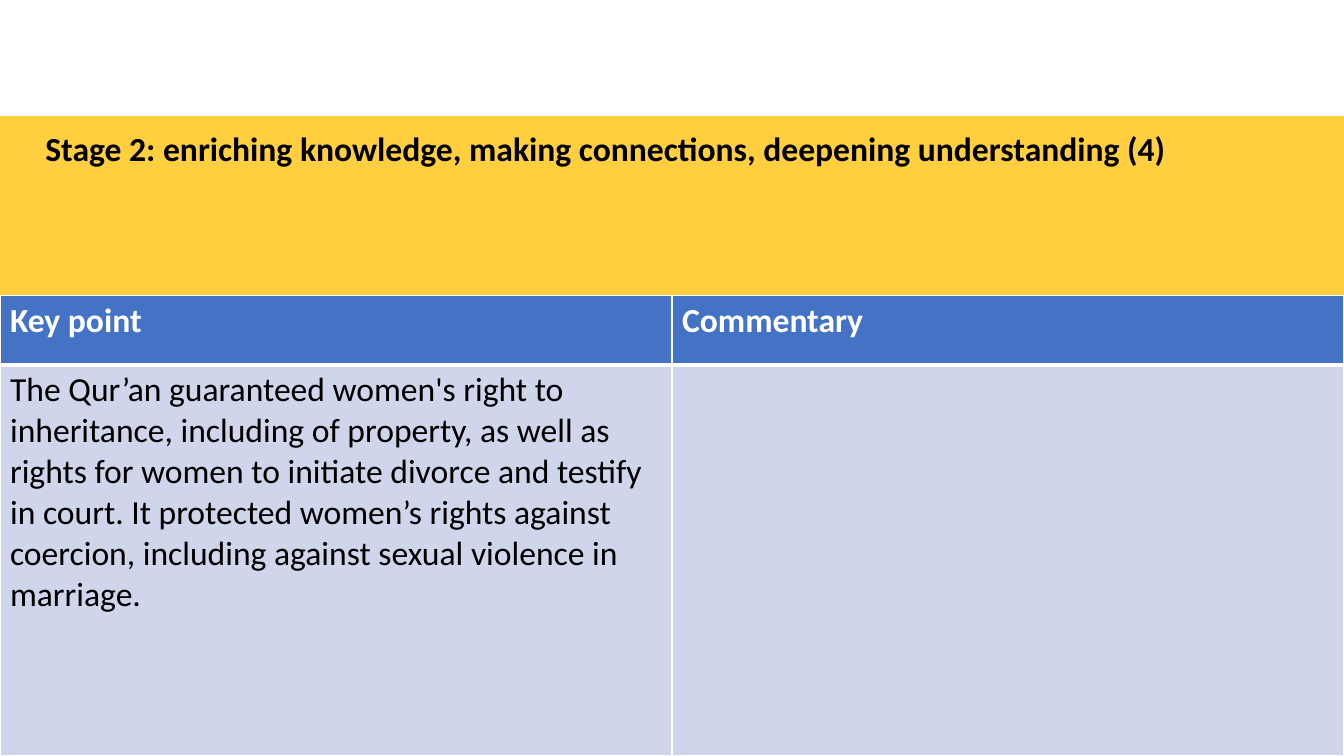
from lxml import etree
from pptx import Presentation
from pptx.dml.color import RGBColor
from pptx.enum.shapes import MSO_SHAPE
from pptx.enum.text import MSO_ANCHOR, PP_ALIGN
from pptx.oxml.ns import qn
from pptx.util import Inches, Pt

RECTANGLE = MSO_SHAPE.RECTANGLE
TOP = MSO_ANCHOR.TOP
LEFT = PP_ALIGN.LEFT
TITLE_ONLY = 5

WIDTH, HEIGHT = 13.33, 7.5
TABLE_TOP, HEADER_HEIGHT = 2.93, 0.69
YELLOW, WHITE, BLACK = "FFCF40", "FFFFFF", "000000"
HEADER_BLUE, BODY_BLUE = "4472C4", "CFD5EA"

TITLE = "Stage 2: enriching knowledge, making connections, deepening understanding (4)"
ROWS = [
    ["Key point", "Commentary"],
    [
        "The Qur’an guaranteed women's right to inheritance, including of property, "
        "as well as rights for women to initiate divorce and testify in court. "
        "It protected women’s rights against coercion, including against sexual "
        "violence in marriage.",
        "",
    ],
]


def paint(fill, color):
    """Give a fill one solid colour."""
    fill.solid()
    fill.fore_color.rgb = RGBColor.from_string(color)


def write(frame, text, size=24, color=BLACK, bold=False, font="Calibri"):
    """Put one formatted, left-aligned paragraph in a text frame."""
    frame.word_wrap = True
    paragraph = frame.paragraphs[0]
    paragraph.text = text
    paragraph.alignment = LEFT
    paragraph.font.size = Pt(size)
    paragraph.font.name = font
    paragraph.font.bold = bold
    paint(paragraph.font.fill, color)


def add_borders(cell, color=WHITE, **widths):
    """Draw the four edges of a cell, one point wide unless given."""
    properties = cell._tc.get_or_add_tcPr()
    for position, edge in enumerate(("lnL", "lnR", "lnT", "lnB")):
        line = etree.Element(qn(f"a:{edge}"), w=str(Pt(widths.get(edge, 1))))
        solid = etree.SubElement(line, qn("a:solidFill"))
        etree.SubElement(solid, qn("a:srgbClr"), val=color)
        properties.insert(position, line)


def add_top_band(slide):
    """Add the white band across the top."""
    band = slide.shapes.add_shape(
        RECTANGLE, 0, Inches(-0.03), Inches(WIDTH), Inches(1.18)
    )
    band.shadow.inherit = False
    paint(band.fill, WHITE)
    band.line.fill.background()


def format_title(slide):
    """Place and write the slide title."""
    title = slide.shapes.title
    title.left, title.top = Inches(0.35), Inches(1.22)
    title.width, title.height = Inches(12.26), Inches(0.91)
    title.text_frame.vertical_anchor = TOP
    write(title.text_frame, TITLE, bold=True)


def add_key_points(slide):
    """Add the table of key points and commentary."""
    table_height = HEIGHT - TABLE_TOP
    table = slide.shapes.add_table(
        len(ROWS), len(ROWS[0]),
        0, Inches(TABLE_TOP), Inches(WIDTH), Inches(table_height),
    ).table
    table.rows[0].height = Inches(HEADER_HEIGHT)
    table.rows[1].height = Inches(table_height - HEADER_HEIGHT)
    for row_index, row in enumerate(ROWS):
        is_header = row_index == 0
        for column_index, text in enumerate(row):
            cell = table.cell(row_index, column_index)
            paint(cell.fill, HEADER_BLUE if is_header else BODY_BLUE)
            add_borders(cell, **{"lnB" if is_header else "lnT": 3})
            write(cell.text_frame, text,
                  color=WHITE if is_header else BLACK, bold=is_header)


def main():
    """Build and save the slide."""
    presentation = Presentation()
    presentation.slide_width = Inches(WIDTH)
    presentation.slide_height = Inches(HEIGHT)
    slide = presentation.slides.add_slide(presentation.slide_layouts[TITLE_ONLY])
    paint(slide.background.fill, YELLOW)
    add_top_band(slide)
    format_title(slide)
    add_key_points(slide)
    presentation.save("out.pptx")


if __name__ == "__main__":
    main()
